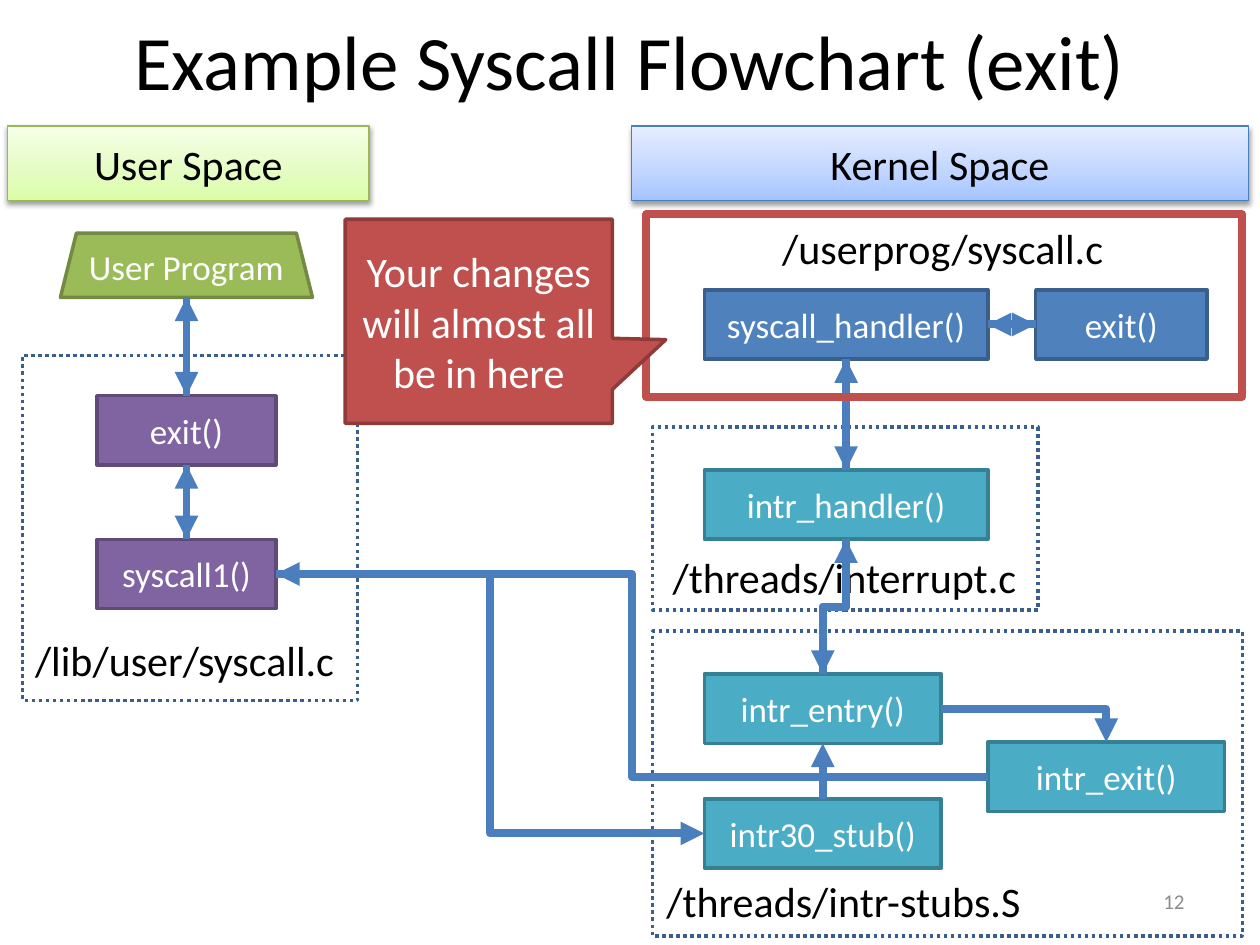
from lxml.etree import SubElement
from pptx import Presentation
from pptx.dml.color import RGBColor
from pptx.enum.dml import MSO_LINE
from pptx.enum.shapes import MSO_CONNECTOR, MSO_SHAPE
from pptx.enum.text import MSO_ANCHOR, MSO_AUTO_SIZE, PP_ALIGN
from pptx.oxml.ns import qn
from pptx.util import Inches, Pt

FONT = "Calibri"
ARROW_COLOR = "4B7EBC"
TOP, LEFT, BOTTOM, RIGHT = range(4)
BOX_HEIGHT = 0.55
COLUMNS = {"user": 0.77, "kernel": 5.59, "exit": 7.84, "service": 8.22}
ROWS = {"syscall": 2.3, "wrapper": 3.14, "handler": 3.73, "trap": 4.28,
        "entry": 5.35, "leave": 5.89, "stub": 6.34}
PALETTES = {
    "program": ("9BBB59", "738A42"),
    "library": ("8064A2", "5F4A78"),
    "threads": ("4BACC6", "377F92"),
    "userprog": ("4F81BD", "3A5F8C"),
    "callout": ("C0504D", "8E3B39"),
}
FUNCTIONS = [
    ("wrapper", "exit()", "user", "wrapper", 1.42, "library"),
    ("trap", "syscall1()", "user", "trap", 1.42, "library"),
    ("stub", "intr30_stub()", "kernel", "stub", 1.88, "threads"),
    ("entry", "intr_entry()", "kernel", "entry", 1.88, "threads"),
    ("handler", "intr_handler()", "kernel", "handler", 2.25, "threads"),
    ("syscall", "syscall_handler()", "kernel", "syscall", 2.25, "userprog"),
    ("service", "exit()", "service", "syscall", 1.36, "userprog"),
    ("leave", "intr_exit()", "exit", "leave", 1.88, "threads"),
]
FILES = [
    ("/lib/user/syscall.c", (0.18, 4.99, 2.6, 0.5), (0.18, 2.82, 2.66, 2.74)),
    ("/threads/intr-stubs.S", (5.19, 6.9, 3.05, 0.5), (5.18, 5.01, 4.68, 2.42)),
    ("/threads/interrupt.c", (5.24, 4.33, 2.96, 0.5), (5.18, 3.39, 3.06, 1.45)),
    ("/userprog/syscall.c", (6.11, 1.72, 2.77, 0.5), (5.13, 1.68, 4.73, 1.45)),
]
HEADERS = [
    ("User Space", (0.06, 1, 2.87, 0.59), "98B955", ("DAFDA7", "E4FCC2", "F5FFE7")),
    ("Kernel Space", (5.01, 1, 4.9, 0.59), ARROW_COLOR, ("A4C4FF", "BFD4FF", "E6EEFF")),
]
TWO_WAY = [
    ("program", BOTTOM, "wrapper", TOP),
    ("wrapper", BOTTOM, "trap", TOP),
    ("handler", TOP, "syscall", BOTTOM),
    ("syscall", RIGHT, "service", LEFT),
]
ELBOWS = [
    ("trap", RIGHT, "stub", LEFT, "bentConnector3", None),
    ("entry", TOP, "handler", BOTTOM, "bentConnector3", 270),
    ("handler", BOTTOM, "entry", TOP, "bentConnector3", 90),
    ("entry", RIGHT, "leave", TOP, "bentConnector2", None),
    ("leave", LEFT, "trap", RIGHT, "bentConnector3", None),
]


def color(value):
    return RGBColor.from_string(value)


def write(shape, text, size, text_color, align=PP_ALIGN.CENTER, anchor=MSO_ANCHOR.MIDDLE):
    frame = shape.text_frame
    frame.word_wrap = True
    frame.vertical_anchor = anchor
    paragraph = frame.paragraphs[0]
    paragraph.alignment = align
    run = paragraph.add_run()
    run.text = text
    run.font.name = FONT
    run.font.size = Pt(size)
    run.font.color.rgb = color(text_color)


def add_block(slide, preset, place, fill, line, width=2):
    shape = slide.shapes.add_shape(preset, *map(Inches, place))
    shape.shadow.inherit = False
    if fill:
        shape.fill.solid()
        shape.fill.fore_color.rgb = color(fill)
    else:
        shape.fill.background()
    shape.line.color.rgb = color(line)
    shape.line.width = Pt(width)
    return shape


def add_text(slide, place, text, size, text_color, align, anchor):
    box = slide.shapes.add_textbox(*map(Inches, place))
    write(box, text, size, text_color, align, anchor)
    return box


def add_header(slide, text, place, line, stops):
    header = add_block(slide, MSO_SHAPE.RECTANGLE, place, None, line, 0.75)
    header.fill.gradient()
    header.fill.gradient_angle = 90
    properties = header._element.spPr
    stop_list = properties.find(qn("a:gradFill")).find(qn("a:gsLst"))
    for old_stop in list(stop_list):
        stop_list.remove(old_stop)
    for position, stop_color in zip((0, 35000, 100000), stops):
        stop = SubElement(stop_list, qn("a:gs"), pos=str(position))
        SubElement(stop, qn("a:srgbClr"), val=stop_color)
    shadow = SubElement(properties.find(qn("a:effectLst")), qn("a:outerShdw"),
                        blurRad=str(Pt(3.1)), dist=str(Pt(1.6)), dir="5400000", rotWithShape="0")
    shadow_color = SubElement(shadow, qn("a:srgbClr"), val="000000")
    SubElement(shadow_color, qn("a:alpha"), val="38000")
    write(header, text, 24, "000000")


def add_arrow(slide, blocks, start, start_side, end, end_side, kind=MSO_CONNECTOR.STRAIGHT):
    arrow = slide.shapes.add_connector(kind, 0, 0, 0, 0)
    arrow.begin_connect(blocks[start], start_side)
    arrow.end_connect(blocks[end], end_side)
    arrow.line.color.rgb = color(ARROW_COLOR)
    arrow.line.width = Pt(4.5)
    SubElement(arrow.line._get_or_add_ln(), qn("a:tailEnd"), type="triangle")
    SubElement(arrow._element.spPr, qn("a:effectLst"))
    return arrow


def add_elbow(slide, blocks, start, start_side, end, end_side, preset, turn):
    arrow = add_arrow(slide, blocks, start, start_side, end, end_side, MSO_CONNECTOR.ELBOW)
    properties = arrow._element.spPr
    properties.find(qn("a:prstGeom")).set("prst", preset)
    if turn:
        center_x = arrow.left + arrow.width // 2
        center_y = arrow.top + arrow.height // 2
        arrow.width, arrow.height = arrow.height, arrow.width
        arrow.left = center_x - arrow.width // 2
        arrow.top = center_y - arrow.height // 2
        transform = properties.find(qn("a:xfrm"))
        transform.set("flipH", "0")
        transform.set("flipV", "0")
        transform.set("rot", str(turn * 60000))


def main():
    presentation = Presentation()
    presentation.slide_width, presentation.slide_height = Inches(10), Inches(7.5)
    slide = presentation.slides.add_slide(presentation.slide_layouts[5])

    title = slide.shapes.title
    title.left, title.top, title.width, title.height = map(Inches, (0.5, 0, 9, 0.94))
    write(title, "Example Syscall Flowchart (exit)", 44, "000000")
    add_text(slide, (7.17, 6.95, 2.33, 0.4), "12", 12, "8C8C8C", PP_ALIGN.RIGHT, MSO_ANCHOR.MIDDLE)

    program = add_block(slide, MSO_SHAPE.TRAPEZOID, (0.48, 1.85, 2, 0.51), *PALETTES["program"])
    write(program, "User Program", 20, "FFFFFF")
    blocks = {"program": program}
    for name, text, column, row, width, palette in FUNCTIONS:
        place = (COLUMNS[column], ROWS[row], width, BOX_HEIGHT)
        blocks[name] = add_block(slide, MSO_SHAPE.RECTANGLE, place, *PALETTES[palette])
        write(blocks[name], text, 20, "FFFFFF")

    for text, label_place, frame_place in FILES:
        label = add_text(slide, label_place, text, 24, "000000", PP_ALIGN.LEFT, MSO_ANCHOR.TOP)
        label.text_frame.word_wrap = False
        label.text_frame.auto_size = MSO_AUTO_SIZE.SHAPE_TO_FIT_TEXT
        frame = add_block(slide, MSO_SHAPE.RECTANGLE, frame_place, None, "3A5F8C")
        frame.line.dash_style = MSO_LINE.ROUND_DOT

    for header in HEADERS:
        add_header(slide, *header)

    for start, start_side, end, end_side in TWO_WAY:
        add_arrow(slide, blocks, start, start_side, end, end_side)
        add_arrow(slide, blocks, end, end_side, start, start_side)
    add_arrow(slide, blocks, "stub", TOP, "entry", BOTTOM)
    for elbow in ELBOWS:
        add_elbow(slide, blocks, *elbow)

    add_block(slide, MSO_SHAPE.RECTANGLE, (5.13, 1.7, 4.73, 1.45), None, "C0504D", 4.5)
    callout = add_block(slide, MSO_SHAPE.RECTANGULAR_CALLOUT, (2.74, 1.74, 2.12, 1.62),
                        *PALETTES["callout"])
    callout.adjustments[0], callout.adjustments[1] = 0.7, 0.09
    write(callout, "Your changes will almost all be in here", 24, "FFFFFF")
    presentation.save("out.pptx")


if __name__ == "__main__":
    main()
